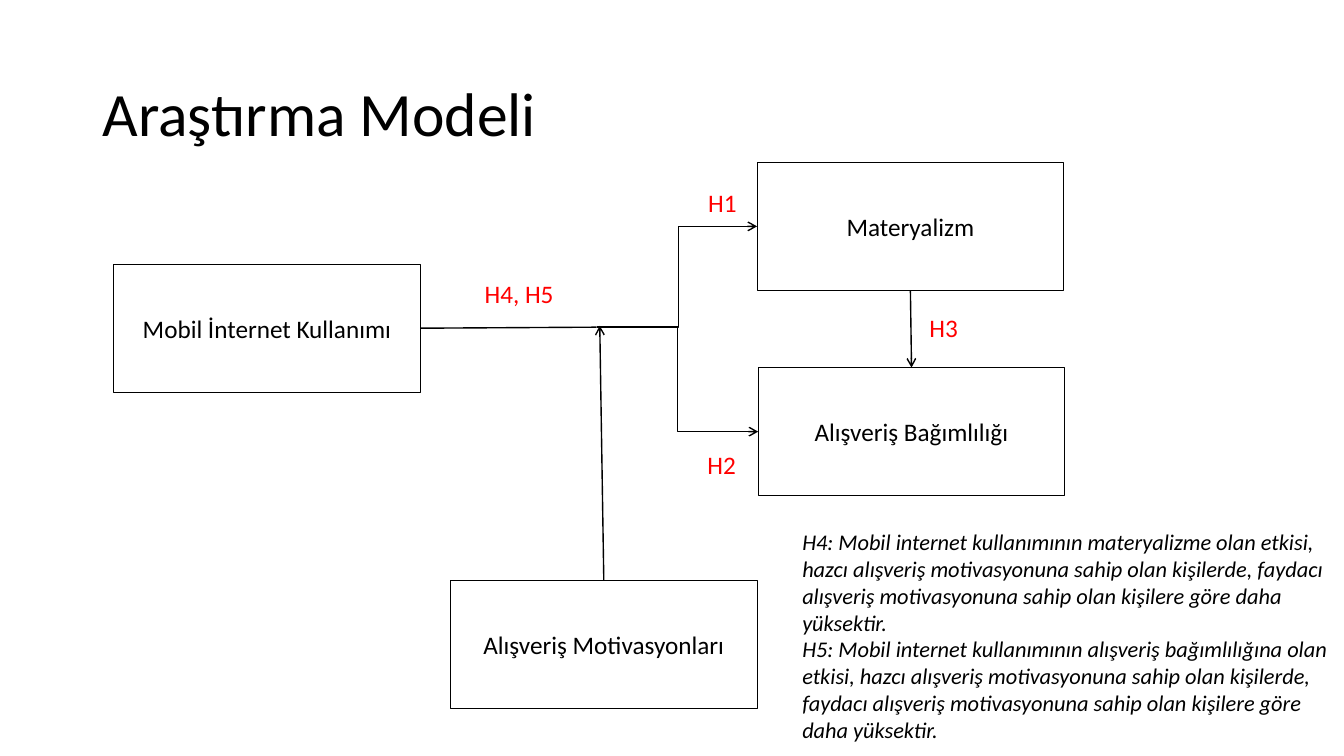
"""Build the research model slide: four boxes, five arrows, hypothesis labels and notes."""
import dataclasses

import pptx
import pptx.util
import pptx.dml.color
import pptx.enum.shapes
import pptx.enum.text
import pptx.oxml
import pptx.oxml.ns

Pt = pptx.util.Pt
RGB = pptx.dml.color.RGBColor
ALIGN = pptx.enum.text.PP_ALIGN
ANCHOR = pptx.enum.text.MSO_ANCHOR
FIT = pptx.enum.text.MSO_AUTO_SIZE
LINK = pptx.enum.shapes.MSO_CONNECTOR
RECT = pptx.enum.shapes.MSO_SHAPE.RECTANGLE
TOP, LEFT, BOTTOM, RIGHT = range(4)


@dataclasses.dataclass(frozen=True)
class Theme:
    font: str = "Calibri"
    ink: RGB = RGB(0, 0, 0)
    paper: RGB = RGB(255, 255, 255)
    accent: RGB = RGB(255, 0, 0)
    title: int = 44
    body: int = 18
    note: int = 16
    edge: float = 0.5
    link: float = 1


THEME = Theme()
BOX = (219, 91.5)
NOTES = (
    "H4: Mobil internet kullanımının materyalizme olan etkisi, hazcı alışveriş "
    "motivasyonuna sahip olan kişilerde, faydacı alışveriş motivasyonuna sahip "
    "olan kişilere göre daha yüksektir.",
    "H5: Mobil internet kullanımının alışveriş bağımlılığına olan etkisi, hazcı "
    "alışveriş motivasyonuna sahip olan kişilerde, faydacı alışveriş "
    "motivasyonuna sahip olan kişilere göre daha yüksektir.",
)


def style(para, size, color=THEME.ink):
    font = para.font
    font.name, font.size = THEME.font, Pt(size)
    font.color.rgb = color


def add_text(slide, lines, area, size, color=THEME.ink, wrap=True):
    shape = slide.shapes.add_textbox(*map(Pt, area))
    frame = shape.text_frame
    frame.word_wrap = wrap
    frame.text = "\n".join(lines)
    for para in frame.paragraphs:
        style(para, size, color)
    return frame


def add_title(slide, text):
    frame = add_text(slide, [text], (66.2, 31, 828, 104.4), THEME.title)
    frame.vertical_anchor = ANCHOR.MIDDLE
    frame.paragraphs[0].line_spacing = 0.9


def add_label(slide, text, left, top, width=35.3):
    area = (left, top, width, 29)
    frame = add_text(slide, [text], area, THEME.body, THEME.accent, False)
    frame.auto_size = FIT.SHAPE_TO_FIT_TEXT


def add_notes(slide):
    frame = add_text(slide, NOTES, (566, 373.7, 393.8, 201), THEME.note)
    frame.auto_size = FIT.SHAPE_TO_FIT_TEXT
    for para in frame.paragraphs:
        para.font.italic = True


def add_box(slide, text, left, top, filled=False):
    box = slide.shapes.add_shape(RECT, *map(Pt, (left, top, *BOX)))
    box.shadow.inherit = False
    if filled:
        box.fill.solid()
        box.fill.fore_color.rgb = THEME.paper
    else:
        box.fill.background()
    box.line.color.rgb = THEME.ink
    box.line.width = Pt(THEME.edge)
    frame = box.text_frame
    frame.word_wrap = True
    frame.vertical_anchor = ANCHOR.MIDDLE
    frame.text = text
    para = frame.paragraphs[0]
    para.alignment = ALIGN.CENTER
    style(para, THEME.body)
    return box


def add_link(slide, start, end, kind=LINK.STRAIGHT, first=None, last=None, arrow=True):
    link = slide.shapes.add_connector(kind, *map(Pt, (*start, *end)))
    if first:
        link.begin_connect(*first)
    if last:
        link.end_connect(*last)
    link.line.color.rgb = THEME.ink
    link.line.width = Pt(THEME.link)
    make = pptx.oxml.xmlchemy.OxmlElement
    if arrow:
        tail = make("a:tailEnd")
        tail.set("type", "arrow")
        link.line._get_or_add_ln().append(tail)
    link._element.spPr.append(make("a:effectLst"))


def main():
    deck = pptx.Presentation()
    deck.slide_width, deck.slide_height = Pt(960), Pt(540)
    slide = deck.slides.add_slide(deck.slide_layouts[6])

    add_title(slide, "Araştırma Modeli")
    usage = add_box(slide, "Mobil İnternet Kullanımı", 81.2, 188.7)
    motive = add_box(slide, "Alışveriş Motivasyonları", 321.8, 414.6)
    habit = add_box(slide, "Alışveriş Bağımlılığı", 541.6, 262.6, True)
    goods = add_box(slide, "Materyalizm", 540.8, 116, True)

    add_link(slide, (300.2, 234.5), (426.2, 233.7), first=(usage, RIGHT), arrow=False)
    add_link(slide, (431.3, 414.6), (428.4, 232.7), first=(motive, TOP))
    add_link(slide, (428.4, 233.7), (540.8, 161.7), LINK.ELBOW, last=(goods, LEFT))
    add_link(slide, (426.2, 233.7), (541.6, 308.4), LINK.ELBOW, last=(habit, LEFT))
    add_link(slide, (650.3, 207.5), (651.1, 262.6),
             first=(goods, BOTTOM), last=(habit, TOP))

    add_label(slide, "H1", 498.7, 130.6)
    add_label(slide, "H2", 498.2, 317.1)
    add_label(slide, "H3", 656.8, 219.8)
    add_label(slide, "H4, H5", 339.1, 195.4, 64)
    add_notes(slide)
    deck.save("out.pptx")


if __name__ == "__main__":
    main()
